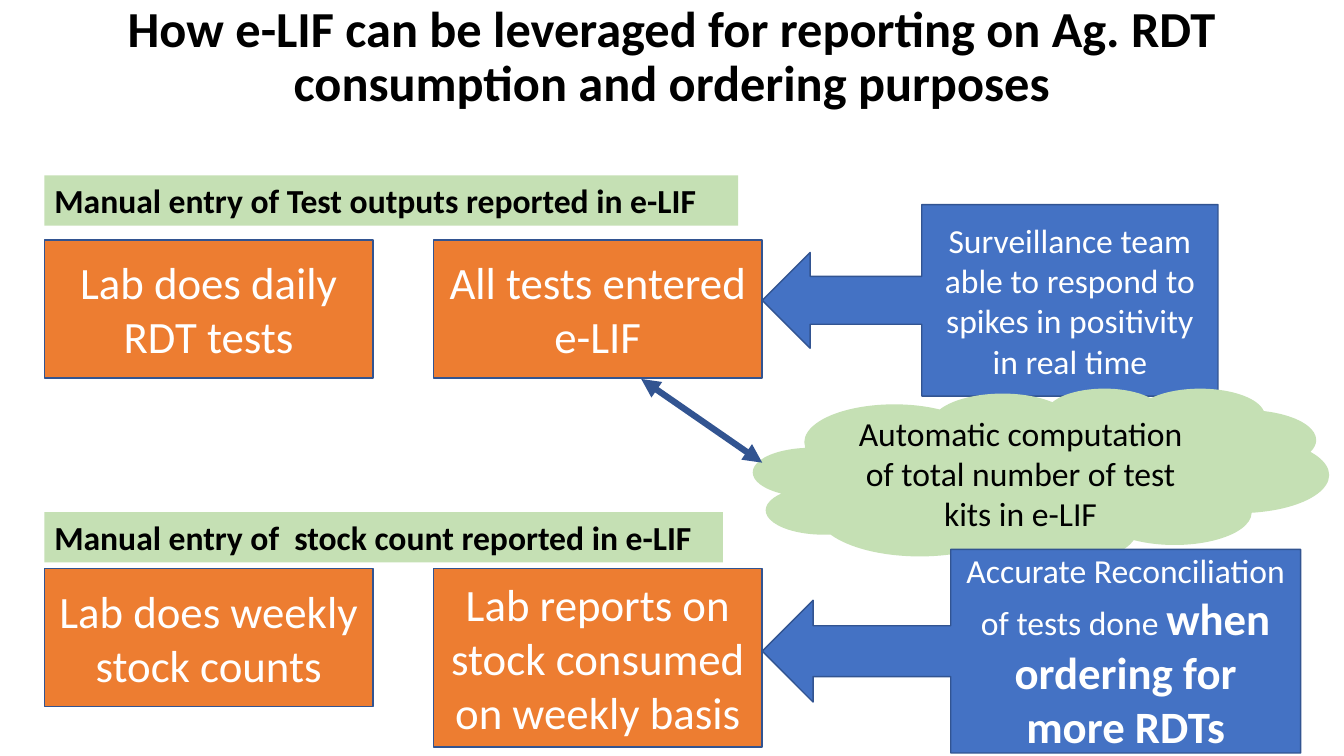
from lxml.etree import SubElement
from pptx import Presentation
from pptx.dml.color import RGBColor
from pptx.enum.shapes import MSO_CONNECTOR as Connector, MSO_SHAPE as Shape
from pptx.enum.text import MSO_ANCHOR as Anchor, MSO_AUTO_SIZE as AutoSize, PP_ALIGN as Align
from pptx.oxml.ns import qn
from pptx.util import Inches, Pt

ORANGE, BLUE, GREEN, OUTLINE = "ED7D31", "4472C4", "C5E0B4", "325491"
BLACK, WHITE = "000000", "FFFFFF"
STEP_WIDTH, STEP_HEIGHT = 3.26, 1.37
STEP_COLUMNS = (0.44, 4.3)
CALLOUT_LEFT = STEP_COLUMNS[1] + STEP_WIDTH


def color(value):
    return RGBColor.from_string(value)


def write(shape, runs, ink, align=Align.CENTER, anchor=Anchor.MIDDLE):
    """Fill a shape with one paragraph of (text, size, bold) runs."""
    frame = shape.text_frame
    frame.word_wrap = True
    frame.auto_size = AutoSize.NONE
    frame.vertical_anchor = anchor
    paragraph = frame.paragraphs[0]
    paragraph.alignment = align
    for text, size, bold in runs:
        run = paragraph.add_run()
        run.text = text
        run.font.name = "Calibri"
        run.font.size = Pt(size)
        run.font.bold = bold
        run.font.color.rgb = color(ink)
    return paragraph


def add_box(slide, kind, box, fill, outline=None):
    shape = slide.shapes.add_shape(kind, *map(Inches, box))
    shape.shadow.inherit = False
    shape.fill.solid()
    shape.fill.fore_color.rgb = color(fill)
    if outline:
        shape.line.color.rgb = color(outline)
        shape.line.width = Pt(1)
    else:
        shape.line.fill.background()
    return shape


def add_title(slide, box, text):
    title = slide.shapes.title
    title.left, title.top, title.width, title.height = map(Inches, box)
    write(title, [(text, 36, True)], BLACK).line_spacing = 0.9


def add_process(slide, top, heading, heading_width, gap, steps):
    """Place a heading band and, below it, a row of (text, height) steps."""
    left, band_height = STEP_COLUMNS[0], 0.5
    band = add_box(slide, Shape.RECTANGLE, (left, top, heading_width, band_height), GREEN)
    write(band, [(heading, 24, True)], BLACK, Align.LEFT, Anchor.TOP)
    for column, (text, height) in zip(STEP_COLUMNS, steps):
        box = (column, top + band_height + gap, STEP_WIDTH, height)
        step = add_box(slide, Shape.RECTANGLE, box, ORANGE, OUTLINE)
        write(step, [(text, 32, False)], WHITE)


def add_callout(slide, box, runs):
    callout = add_box(slide, Shape.LEFT_ARROW_CALLOUT, box, BLUE, OUTLINE)
    write(callout, runs, WHITE)


def add_cloud(slide, box, text):
    cloud = add_box(slide, Shape.CLOUD, box, GREEN)
    write(cloud, [(text, 24, False)], BLACK)


def add_double_arrow(slide, start, end):
    arrow = slide.shapes.add_connector(Connector.STRAIGHT, *map(Inches, start + end))
    arrow.line.color.rgb = color(OUTLINE)
    arrow.line.width = Pt(4.5)
    line = arrow.line._get_or_add_ln()
    for end_name in ("a:headEnd", "a:tailEnd"):
        SubElement(line, qn(end_name), type="triangle")
    SubElement(arrow._element.spPr, qn("a:effectLst"))


def main():
    presentation = Presentation()
    presentation.slide_width, presentation.slide_height = Inches(13.33), Inches(7.5)
    slide = presentation.slides.add_slide(presentation.slide_layouts[5])
    add_title(slide, (0.27, 0.1, 12.79, 0.95),
              "How e-LIF can be leveraged for reporting on Ag. RDT consumption and ordering purposes")
    add_process(slide, 1.74, "Manual entry of Test outputs reported in e-LIF", 6.88, 0.14,
                [("Lab does daily RDT tests", STEP_HEIGHT),
                 ("All tests entered e-LIF", STEP_HEIGHT)])
    add_process(slide, 5.08, "Manual entry of  stock count reported in e-LIF", 6.73, 0.06,
                [("Lab does weekly stock counts", STEP_HEIGHT),
                 ("Lab reports on stock consumed on weekly basis", 1.77)])
    add_callout(slide, (CALLOUT_LEFT, 2.03, 4.52, 1.9),
                [("Surveillance team able to respond to spikes in positivity in real time", 24, False)])
    add_cloud(slide, (7.47, 3.85, 5.71, 1.77),
              "Automatic computation of total number of test kits in e-LIF")
    add_callout(slide, (CALLOUT_LEFT, 5.45, 5.34, 2.02),
                [("Accurate Reconciliation of tests done ", 24, False),
                 ("when ordering for more RDTs", 32, True)])
    add_double_arrow(slide, (6.36, 3.76), (CALLOUT_LEFT, 4.59))
    presentation.save("out.pptx")


if __name__ == "__main__":
    main()
